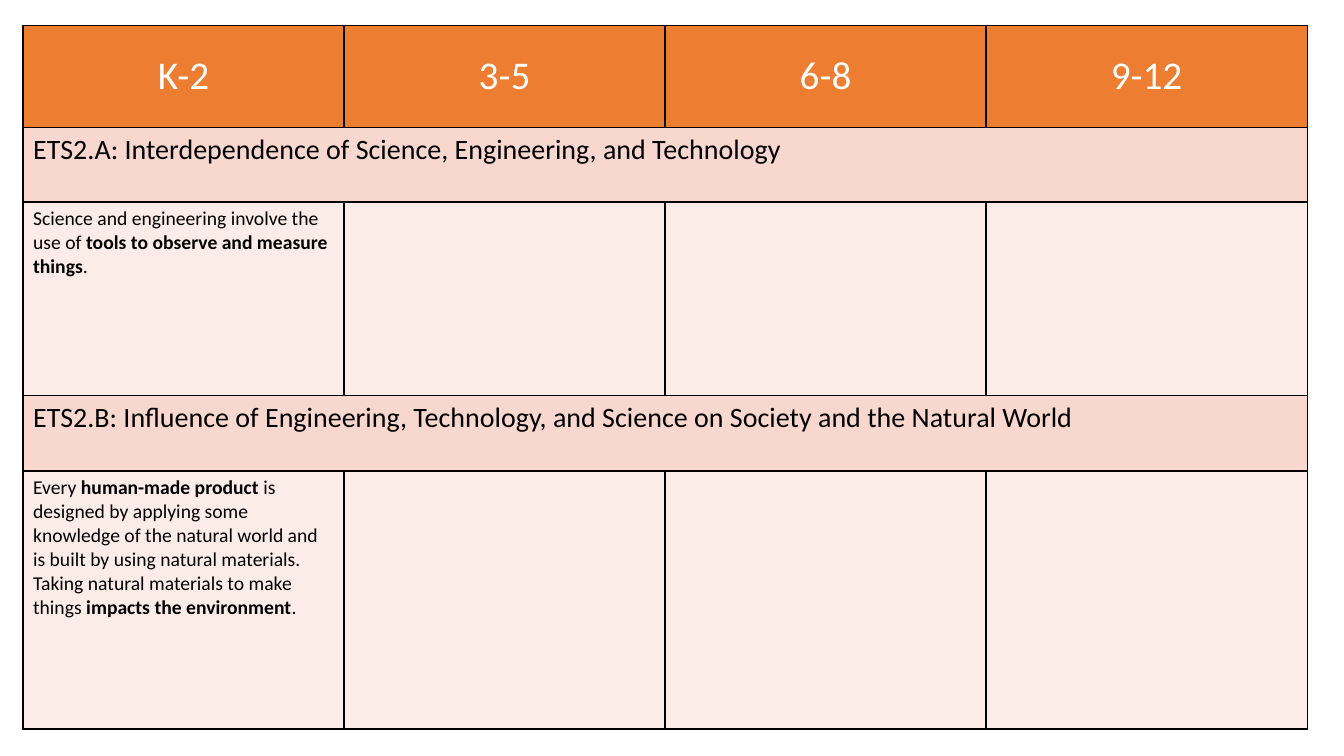
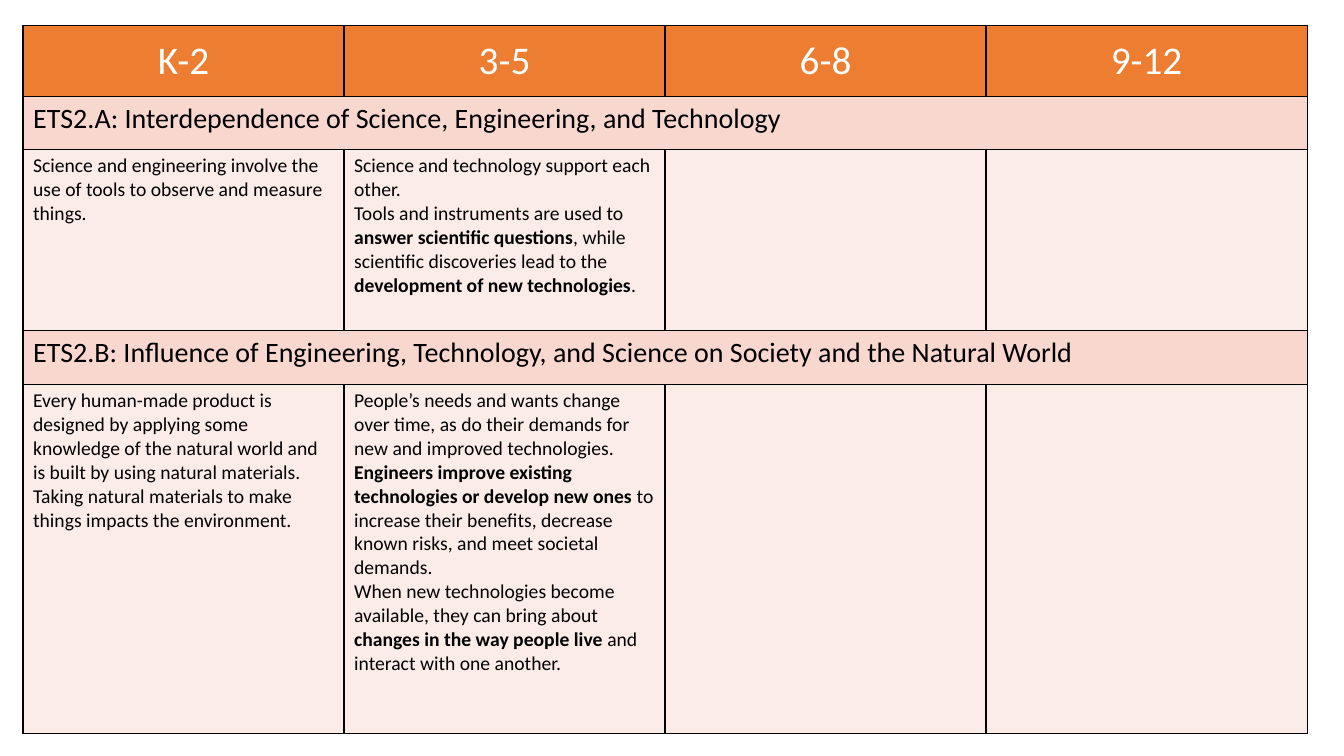
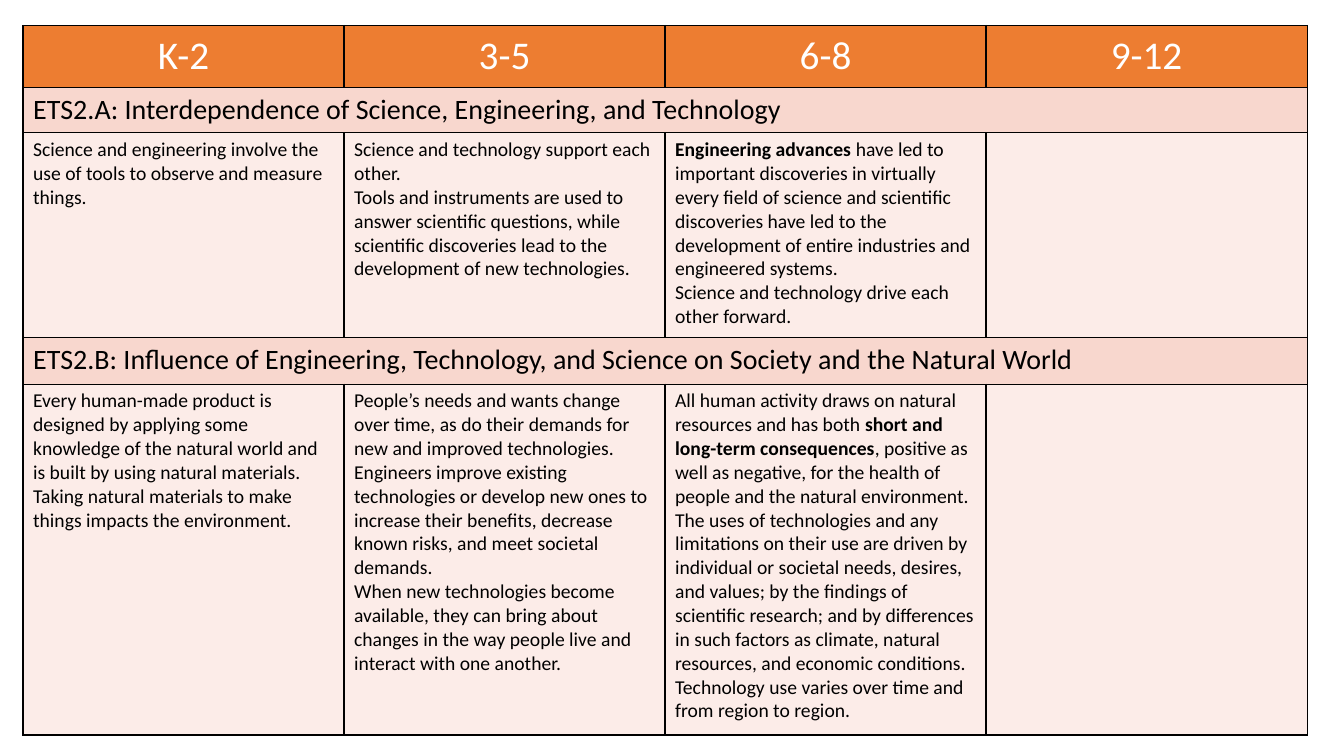
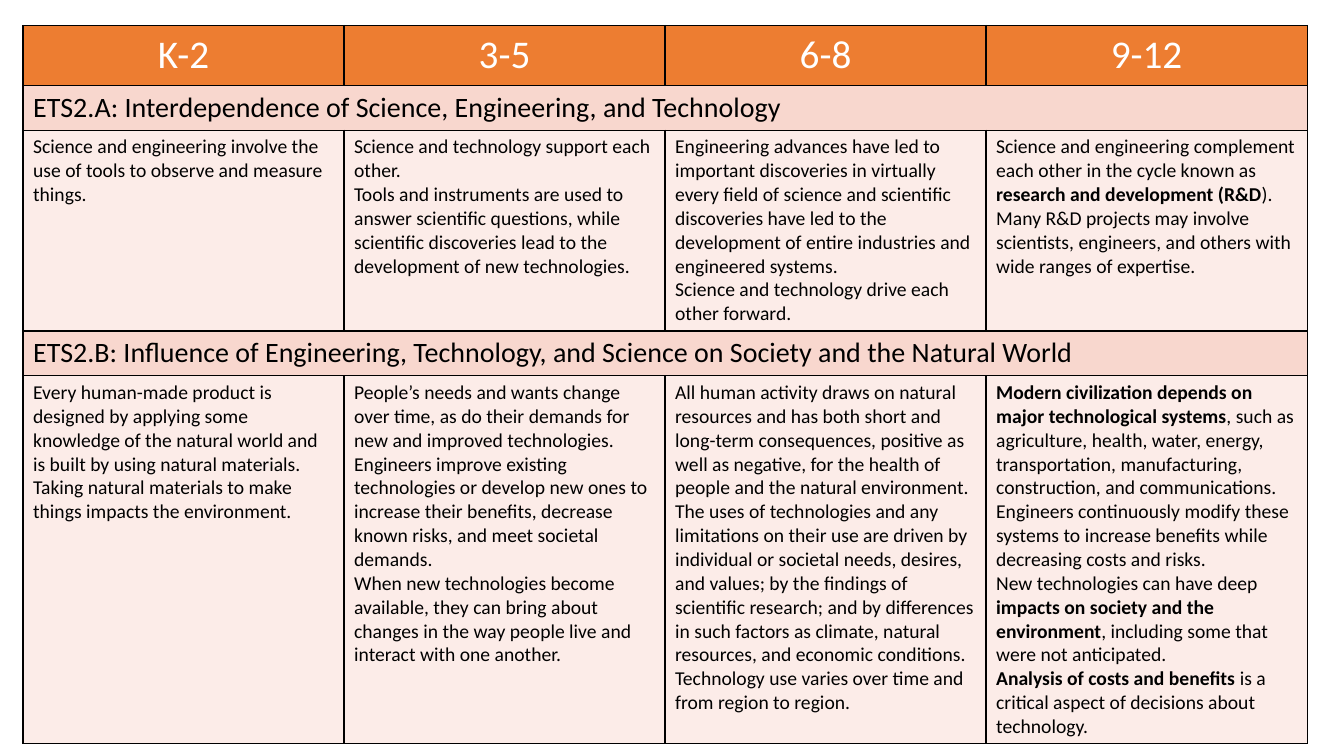
import pptx
import pptx.dml.color
import pptx.enum.text
import pptx.oxml
import pptx.oxml.ns
import pptx.util
from pptx.util import Cm

GRADES = ["K-2", "3-5", "6-8", "9-12"]

# Each strand holds one list of paragraphs per grade band; ** marks key phrases.
STRANDS = {
    "ETS2.A: Interdependence of Science, Engineering, and Technology": [
        ["Science and engineering involve the use of **tools to observe and measure things**."],
        ["Science and technology support each other.",
         "Tools and instruments are used to **answer scientific questions**, while scientific "
         "discoveries lead to the **development of new technologies**."],
        ["**Engineering advances **have led to important discoveries in virtually every field of "
         "science and scientific discoveries have led to the development of entire industries "
         "and engineered systems.",
         "Science and technology drive each other forward."],
        ["Science and engineering complement each other in the cycle known as "
         "**research and development (R&D**).",
         "Many R&D projects may involve scientists, engineers, and others with wide ranges of "
         "expertise."],
    ],
    "ETS2.B: Influence of Engineering, Technology, and Science on Society and the Natural World": [
        ["Every **human-made product **is designed by applying some knowledge of the natural "
         "world and is built by using natural materials.",
         "Taking natural materials to make things **impacts the environment**."],
        ["People’s needs and wants change over time, as do their demands for new and improved "
         "technologies.",
         "**Engineers improve existing technologies or develop new ones **to increase their "
         "benefits, decrease known risks, and meet societal demands.",
         "When new technologies become available, they can bring about **changes in the way "
         "people live **and interact with one another."],
        ["All human activity draws on natural resources and has both **short and long-term "
         "consequences**, positive as well as negative, for the health of people and the natural "
         "environment.",
         "The uses of technologies and any limitations on their use are driven by individual or "
         "societal needs, desires, and values; by the findings of scientific research; and by "
         "differences in such factors as climate, natural resources, and economic conditions.",
         "Technology use varies over time and from region to region."],
        ["**Modern civilization depends on major technological systems**, such as agriculture, "
         "health, water, energy, transportation, manufacturing, construction, and "
         "communications.",
         "Engineers continuously modify these systems to increase benefits while decreasing "
         "costs and risks.",
         "New technologies can have deep **impacts on society and the environment**, including "
         "some that were not anticipated.",
         "**Analysis of costs and benefits **is a critical aspect of decisions about technology."],
    ],
}

# Row heights in cm, one tuple per slide.
ROW_HEIGHTS = [
    (2.57, 1.88, 4.88, 1.9, 6.5),
    (1.8, 1.32, 4.57, 1.35, 8.81),
    (1.57, 1.14, 5.16, 1.17, 8.84),
    (1.52, 1.1, 5.06, 1.13, 9.27),
]


def rgb(value):
    return pptx.dml.color.RGBColor.from_string(value)


class Deck:
    FONT = "Calibri"
    HEADER, STRAND, BODY = "ED7D31", "F8D7CE", "FCECE8"
    WHITE, BLACK = "FFFFFF", "000000"
    LEFT, TOP, COL_WIDTH = 0.58, 0.64, 8.09

    def __init__(self):
        self.prs = pptx.Presentation()
        self.prs.slide_width = Cm(33.87)
        self.prs.slide_height = Cm(19.05)
        self.s = None

    def slide(self):
        self.s = self.prs.slides.add_slide(self.prs.slide_layouts[6])

    def table(self, heights, columns):
        frame = self.s.shapes.add_table(
            len(heights), columns, Cm(self.LEFT), Cm(self.TOP),
            Cm(self.COL_WIDTH * columns), Cm(sum(heights)))
        table = frame.table
        table.first_row = table.horz_banding = False
        for column in table.columns:
            column.width = Cm(self.COL_WIDTH)
        for row, height in zip(table.rows, heights):
            row.height = Cm(height)
        return table

    def borders(self, cell):
        props = cell._tc.get_or_add_tcPr()
        for side in "LRTB":
            props.append(pptx.oxml.parse_xml(
                f'<a:ln{side} {pptx.oxml.ns.nsdecls("a")} w="12700"><a:solidFill>'
                f'<a:srgbClr val="{self.BLACK}"/></a:solidFill></a:ln{side}>'))

    def cell(self, cell, fill, paragraphs=(), size=14, color=BLACK, emphasis=False,
             centred=False):
        """Style a cell and write its paragraphs, with marked phrases bold on emphasis."""
        self.borders(cell)
        cell.fill.solid()
        cell.fill.fore_color.rgb = rgb(fill)
        if centred:
            cell.vertical_anchor = pptx.enum.text.MSO_ANCHOR.MIDDLE
        tf = cell.text_frame
        for i, text in enumerate(paragraphs):
            p = tf.add_paragraph() if i else tf.paragraphs[0]
            if centred:
                p.alignment = pptx.enum.text.PP_ALIGN.CENTER
            p.font.name = self.FONT
            p.font.size = pptx.util.Pt(size)
            p.font.color.rgb = rgb(color)
            if not emphasis:
                text = text.replace("**", "")
            for j, part in enumerate(text.split("**")):
                if part:
                    r = p.add_run()
                    r.text = part
                    if j % 2:
                        r.font.bold = True

    def progression(self, heights, shown):
        """Add a slide with the first grade bands filled in, the newest one emphasised."""
        self.slide()
        table = self.table(heights, len(GRADES))
        for col, grade in enumerate(GRADES):
            self.cell(table.cell(0, col), self.HEADER, [grade], 28, self.WHITE, centred=True)
        for i, (title, bands) in enumerate(STRANDS.items()):
            row = 1 + 2 * i
            for col, paragraphs in enumerate(bands):
                self.cell(table.cell(row, col), self.STRAND, [] if col else [title], 20)
                self.cell(table.cell(row + 1, col), self.BODY,
                          paragraphs if col < shown else [], emphasis=col == shown - 1)
            table.cell(row, 0).merge(table.cell(row, len(GRADES) - 1))


def main():
    deck = Deck()
    for shown, heights in enumerate(ROW_HEIGHTS, start=1):
        deck.progression(heights, shown)
    deck.prs.save("out.pptx")


if __name__ == "__main__":
    main()
